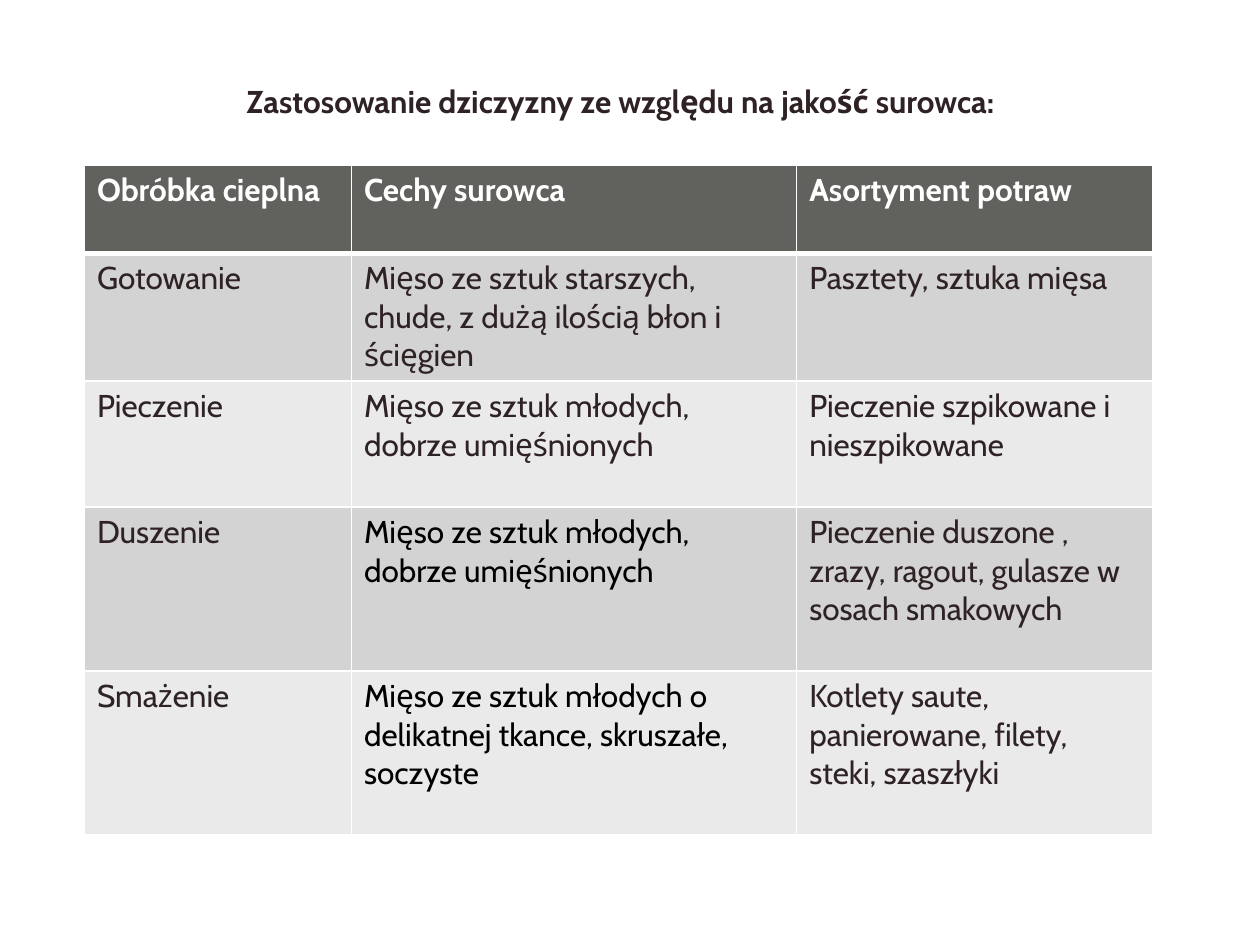
from dataclasses import dataclass

from lxml.etree import SubElement
from pptx import Presentation
from pptx.dml.color import RGBColor
from pptx.enum.text import MSO_ANCHOR, MSO_AUTO_SIZE, PP_ALIGN
from pptx.oxml.ns import qn
from pptx.util import Inches, Pt


@dataclass(frozen=True)
class Theme:
    font: str = "Cabin"
    size: int = 18
    ink: str = "2E2224"
    black: str = "000000"
    white: str = "FFFFFF"
    header: str = "61625E"
    bands: tuple = ("D2D3D2", "EAEAEA")
    grid_width: int = 1
    header_rule: int = 3


THEME = Theme()
TITLE = "Zastosowanie dziczyzny ze względu na jakość surowca:"
HEADINGS = ("Obróbka cieplna", "Cechy surowca", "Asortyment potraw")
TREATMENTS = (
    ("Gotowanie",
     "Mięso ze sztuk starszych, chude, z dużą ilością błon i ścięgien",
     "Pasztety, sztuka mięsa"),
    ("Pieczenie",
     "Mięso ze sztuk młodych, dobrze umięśnionych",
     "Pieczenie szpikowane i nieszpikowane"),
    ("Duszenie",
     "Mięso ze sztuk młodych, dobrze umięśnionych",
     "Pieczenie duszone , zrazy, ragout, gulasze w sosach smakowych"),
    ("Smażenie",
     "Mięso ze sztuk młodych o delikatnej tkance, skruszałe, soczyste",
     "Kotlety saute, panierowane, filety, steki, szaszłyki"),
)
BLACK_CELLS = {(3, 1), (4, 1)}
COLUMN_SHARES = (3, 5, 4)
ROW_HEIGHTS = (0.7, 1, 1, 1.3, 1.3)
TABLE_LEFT, TABLE_TOP, TABLE_WIDTH = 0.67, 1.31, 8.48


def write_text(frame, text, color, bold=False):
    frame.text = text
    font = frame.paragraphs[0].runs[0].font
    font.name = THEME.font
    font.size = Pt(THEME.size)
    font.bold = bold
    font.color.rgb = RGBColor.from_string(color)


def add_title(slide):
    title = slide.shapes.title
    title.left, title.top = Inches(0.91), Inches(0.6)
    title.width, title.height = Inches(8.03), Inches(0.71)
    frame = title.text_frame
    frame.word_wrap = True
    frame.auto_size = MSO_AUTO_SIZE.NONE
    frame.vertical_anchor = MSO_ANCHOR.TOP
    write_text(frame, TITLE, THEME.ink, bold=True)
    frame.paragraphs[0].alignment = PP_ALIGN.CENTER


def draw_borders(cell, row):
    """Add the white grid; the rule below the header is thicker."""
    properties = cell._tc.get_or_add_tcPr()
    widths = dict.fromkeys(("lnL", "lnR", "lnT", "lnB"), THEME.grid_width)
    if row == 0:
        widths["lnB"] = THEME.header_rule
    elif row == 1:
        widths["lnT"] = THEME.header_rule
    for side, width in widths.items():
        line = SubElement(properties, qn(f"a:{side}"), w=str(Pt(width)))
        fill = SubElement(line, qn("a:solidFill"))
        SubElement(fill, qn("a:srgbClr"), val=THEME.white)


def style_cell(cell, text, row, column):
    is_header = row == 0
    background = THEME.header if is_header else THEME.bands[(row - 1) % 2]
    if is_header:
        color = THEME.white
    else:
        color = THEME.black if (row, column) in BLACK_CELLS else THEME.ink
    write_text(cell.text_frame, text, color, bold=is_header)
    draw_borders(cell, row)
    cell.fill.solid()
    cell.fill.fore_color.rgb = RGBColor.from_string(background)


def add_treatment_table(slide):
    content = (HEADINGS, *TREATMENTS)
    table = slide.shapes.add_table(
        len(content), len(HEADINGS), Inches(TABLE_LEFT), Inches(TABLE_TOP),
        Inches(TABLE_WIDTH), Inches(sum(ROW_HEIGHTS))).table
    for column, share in zip(table.columns, COLUMN_SHARES):
        column.width = Inches(TABLE_WIDTH * share / sum(COLUMN_SHARES))
    for row, height in zip(table.rows, ROW_HEIGHTS):
        row.height = Inches(height)
    for row, texts in enumerate(content):
        for column, text in enumerate(texts):
            style_cell(table.cell(row, column), text, row, column)


def main():
    deck = Presentation()
    deck.slide_width, deck.slide_height = Inches(10), Inches(7.5)
    slide = deck.slides.add_slide(deck.slide_layouts.get_by_name("Title Only"))
    add_title(slide)
    add_treatment_table(slide)
    deck.save("out.pptx")


if __name__ == "__main__":
    main()
